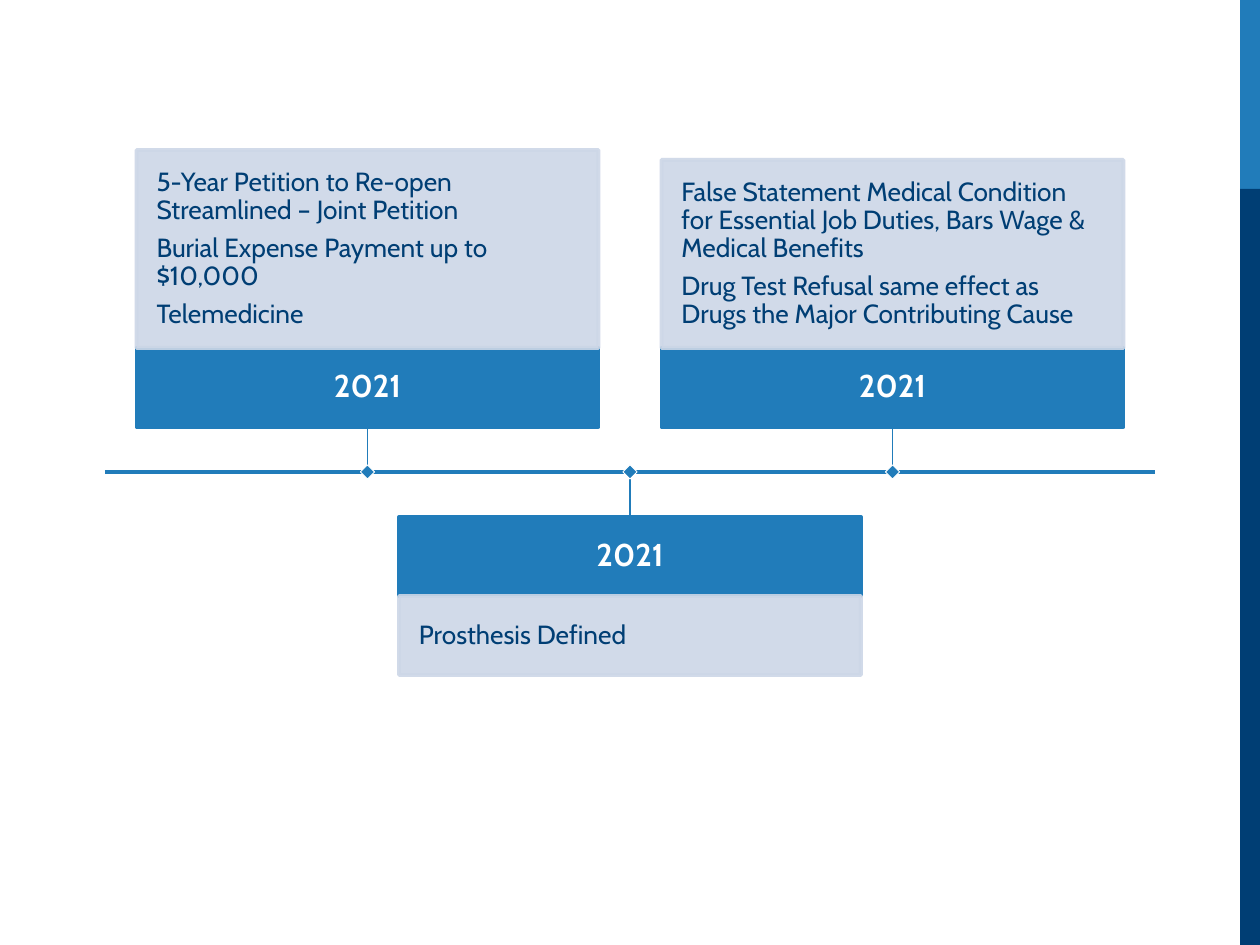
from lxml import etree
from pptx import Presentation
from pptx import util as u
from pptx.dml.color import RGBColor
from pptx.enum import shapes, text
from pptx.oxml.ns import qn

COLORS = {"blue": "217CBA", "navy": "003E74", "pale": "CDD7E7", "white": "FFFFFF"}
FONT = "Cabin"
EVENTS = [
    ("2021", ["5-Year Petition to Re-open Streamlined – Joint Petition",
              "Burial Expense Payment up to $10,000",
              "Telemedicine"], 198, True),
    ("2021", ["Prosthesis Defined"], 79, False),
    ("2021", ["False Statement Medical Condition for Essential Job Duties, "
              "Bars Wage & Medical Benefits",
              "Drug Test Refusal same effect as Drugs the Major Contributing Cause"],
     188, True),
]


def px(length):
    return u.Emu(round(length * 914400 / 126))


def color(name):
    return RGBColor.from_string(COLORS[name])


def add_rect(slide, box, fill, line=None, weight=2.25, alpha=None):
    rect = slide.shapes.add_shape(shapes.MSO_SHAPE.RECTANGLE, *map(px, box))
    rect.shadow.inherit = False
    rect.fill.solid()
    rect.fill.fore_color.rgb = color(fill)
    if line:
        rect.line.color.rgb = color(line)
        rect.line.width = u.Pt(weight)
    else:
        rect.line.fill.background()
    if alpha:
        for paint in rect._element.spPr.iter(qn("a:srgbClr")):
            etree.SubElement(paint, qn("a:alpha"), val=str(alpha * 1000))
    return rect


def add_line(slide, start, end, weight):
    line = slide.shapes.add_connector(
        shapes.MSO_CONNECTOR.STRAIGHT, *map(px, start + end))
    line.line.color.rgb = color("blue")
    line.line.width = u.Pt(weight)
    etree.SubElement(line._element.spPr, qn("a:effectLst"))
    return line


def write(shape, lines, inset, size, ink, align, bold=False):
    frame = shape.text_frame
    frame.word_wrap = True
    frame.vertical_anchor = text.MSO_ANCHOR.MIDDLE
    frame.margin_left = frame.margin_right = px(inset)
    frame.margin_top = frame.margin_bottom = px(inset)
    for index, line in enumerate(lines):
        para = frame.paragraphs[0] if index == 0 else frame.add_paragraph()
        para.alignment = align
        para.line_spacing = 0.9
        # Space after, as a share of the text size
        after = etree.SubElement(para._p.get_or_add_pPr(), qn("a:spcAft"))
        etree.SubElement(after, qn("a:spcPct"), val="35000")
        span = para.add_run()
        span.text = line
        span.font.name = FONT
        span.font.size = u.Pt(size)
        span.font.bold = bold
        span.font.color.rgb = color(ink)


def add_side_band(slide, box):
    left, top, width, height = box
    split = height // 5
    add_rect(slide, (left, top, width, split), "blue")
    add_rect(slide, (left, top + split, width, height - split), "navy")


def add_event(slide, center, axis, event):
    year, lines, body_height, above = event
    width, head_height, stem_length, marker = 462, 79, 45, 10
    left = center - width / 2
    if above:
        head_top = axis - stem_length - head_height
        body_top = head_top - body_height
    else:
        head_top = axis + stem_length
        body_top = head_top + head_height

    # Year and details
    head = add_rect(slide, (left, head_top, width, head_height), "blue", "blue")
    write(head, [year], 13, 18, "white", text.PP_ALIGN.CENTER, bold=True)
    body = add_rect(slide, (left, body_top, width, body_height),
                    "pale", "pale", alpha=90)
    write(body, lines, 20, 15, "navy", text.PP_ALIGN.LEFT)

    # Stem and diamond on the axis
    stem = add_line(slide, (center, head_top), (center, axis), 1)
    stem.begin_connect(head, 2 if above else 0)
    diamond = add_rect(slide, (center - marker / 2, axis - marker / 2, marker, marker),
                       "blue", "white", 0.5)
    diamond.rotation = 45


def add_timeline(slide, box):
    left, top, width, height = box
    axis = top + height // 2
    add_line(slide, (left, axis), (left + width, axis), 2.25)
    step = width / (len(EVENTS) + 1)
    for index, event in enumerate(EVENTS, start=1):
        add_event(slide, left + index * step, axis, event)


def main():
    deck = Presentation()
    deck.slide_width, deck.slide_height = px(1260), px(945)
    slide = deck.slides.add_slide(deck.slide_layouts[6])
    add_side_band(slide, (1240, 0, 20, 945))
    add_timeline(slide, (105, 150, 1050, 645))
    deck.save("out.pptx")


if __name__ == "__main__":
    main()
